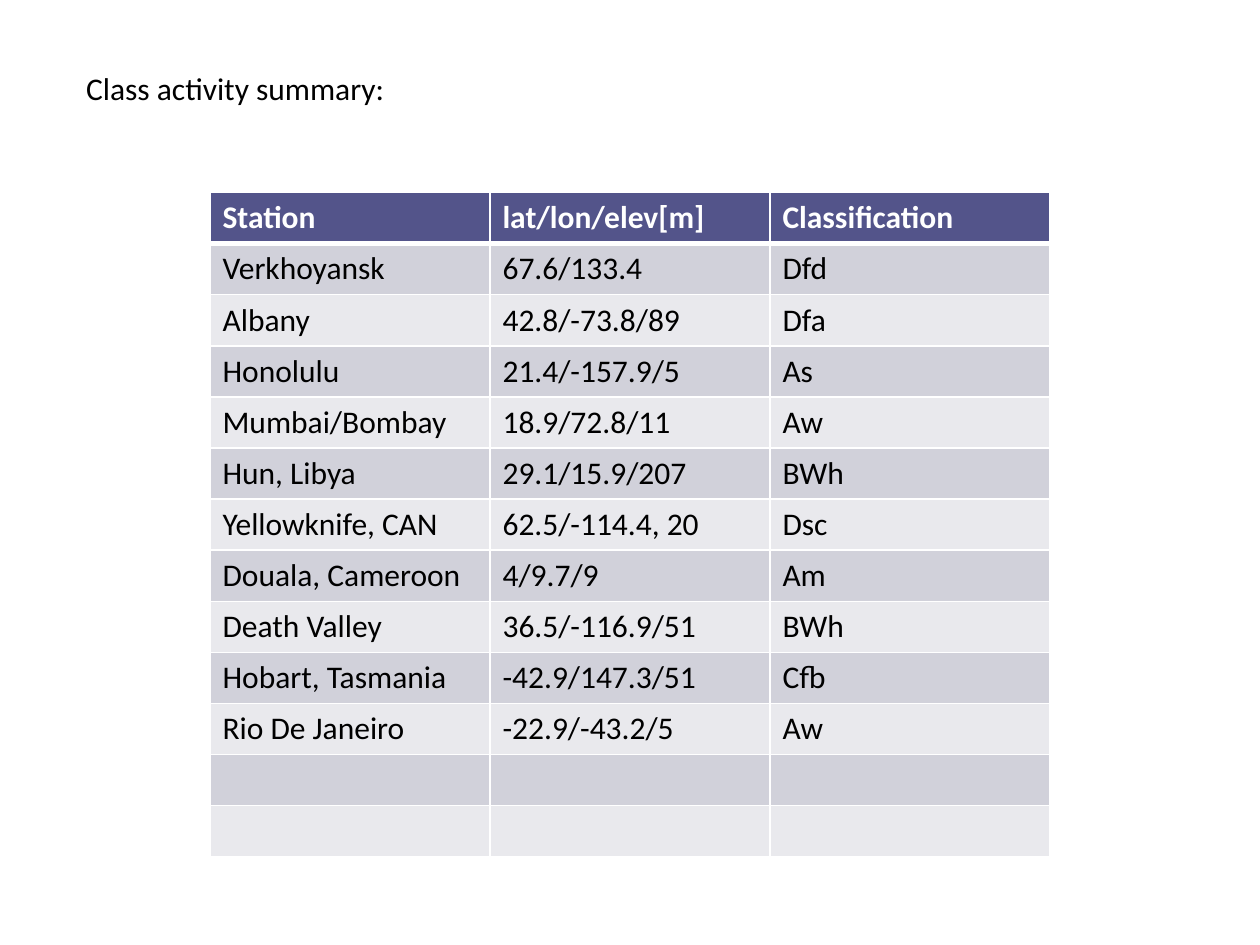
from dataclasses import dataclass

from lxml import etree
from pptx import Presentation
from pptx.dml.color import RGBColor
from pptx.enum import text
from pptx.oxml import ns
from pptx.util import Pt


@dataclass(frozen=True)
class Theme:
    font: str = "Calibri"
    size: int = 18
    ink: str = "000000"
    white: str = "FFFFFF"
    header: str = "53548A"
    bands: tuple = ("D1D1DA", "E9E9ED")


theme = Theme()


def write_text(frame, content, color=theme.ink, bold=False):
    paragraph = frame.paragraphs[0]
    paragraph.alignment = text.PP_ALIGN.LEFT
    paragraph.font.size = Pt(theme.size)
    if content:
        run = paragraph.add_run()
        run.text = content
        run.font.name = theme.font
        run.font.size = Pt(theme.size)
        run.font.bold = bold
        run.font.color.rgb = RGBColor.from_string(color)


def format_cell(cell, fill, top, bottom):
    """Fill a cell and draw white borders; top and bottom are widths in points."""
    properties = cell._tc.get_or_add_tcPr()
    for tag, width in (("a:lnL", 1), ("a:lnR", 1), ("a:lnT", top), ("a:lnB", bottom)):
        line = etree.SubElement(properties, ns.qn(tag), w=str(Pt(width)))
        solid = etree.SubElement(line, ns.qn("a:solidFill"))
        etree.SubElement(solid, ns.qn("a:srgbClr"), val=theme.white)
    cell.fill.solid()
    cell.fill.fore_color.rgb = RGBColor.from_string(fill)


presentation = Presentation()
presentation.slide_width = Pt(720)
presentation.slide_height = Pt(540)
slide = presentation.slides.add_slide(presentation.slide_layouts[5])

title = slide.shapes.title
title.left, title.top, title.width, title.height = Pt(42), Pt(36), Pt(186), Pt(29)
frame = title.text_frame
frame.word_wrap = False
frame.auto_size = text.MSO_AUTO_SIZE.SHAPE_TO_FIT_TEXT
frame.vertical_anchor = text.MSO_ANCHOR.TOP
write_text(frame, "Class activity summary:")

stations = [
    ("Station", "lat/lon/elev[m]", "Classification"),
    ("Verkhoyansk", "67.6/133.4", "Dfd"),
    ("Albany", "42.8/-73.8/89", "Dfa"),
    ("Honolulu", "21.4/-157.9/5", "As"),
    ("Mumbai/Bombay", "18.9/72.8/11", "Aw"),
    ("Hun, Libya", "29.1/15.9/207", "BWh"),
    ("Yellowknife, CAN", "62.5/-114.4, 20", "Dsc"),
    ("Douala, Cameroon", "4/9.7/9", "Am"),
    ("Death Valley", "36.5/-116.9/51", "BWh"),
    ("Hobart, Tasmania", "-42.9/147.3/51", "Cfb"),
    ("Rio De Janeiro", "-22.9/-43.2/5", "Aw"),
    ("", "", ""),
    ("", "", ""),
]
column_width, row_height = 160, 29.2
row_count, column_count = len(stations), len(stations[0])
table = slide.shapes.add_table(
    row_count, column_count, Pt(120), Pt(110),
    Pt(column_width * column_count), Pt(row_height * row_count),
).table
for column in table.columns:
    column.width = Pt(column_width)
for row_index, (row, station) in enumerate(zip(table.rows, stations)):
    row.height = Pt(row_height)
    is_header = row_index == 0
    fill = theme.header if is_header else theme.bands[(row_index - 1) % 2]
    color = theme.white if is_header else theme.ink
    for cell, content in zip(row.cells, station):
        write_text(cell.text_frame, content, color=color, bold=is_header)
        format_cell(cell, fill, top=3 if row_index == 1 else 1, bottom=3 if is_header else 1)

presentation.save("out.pptx")
